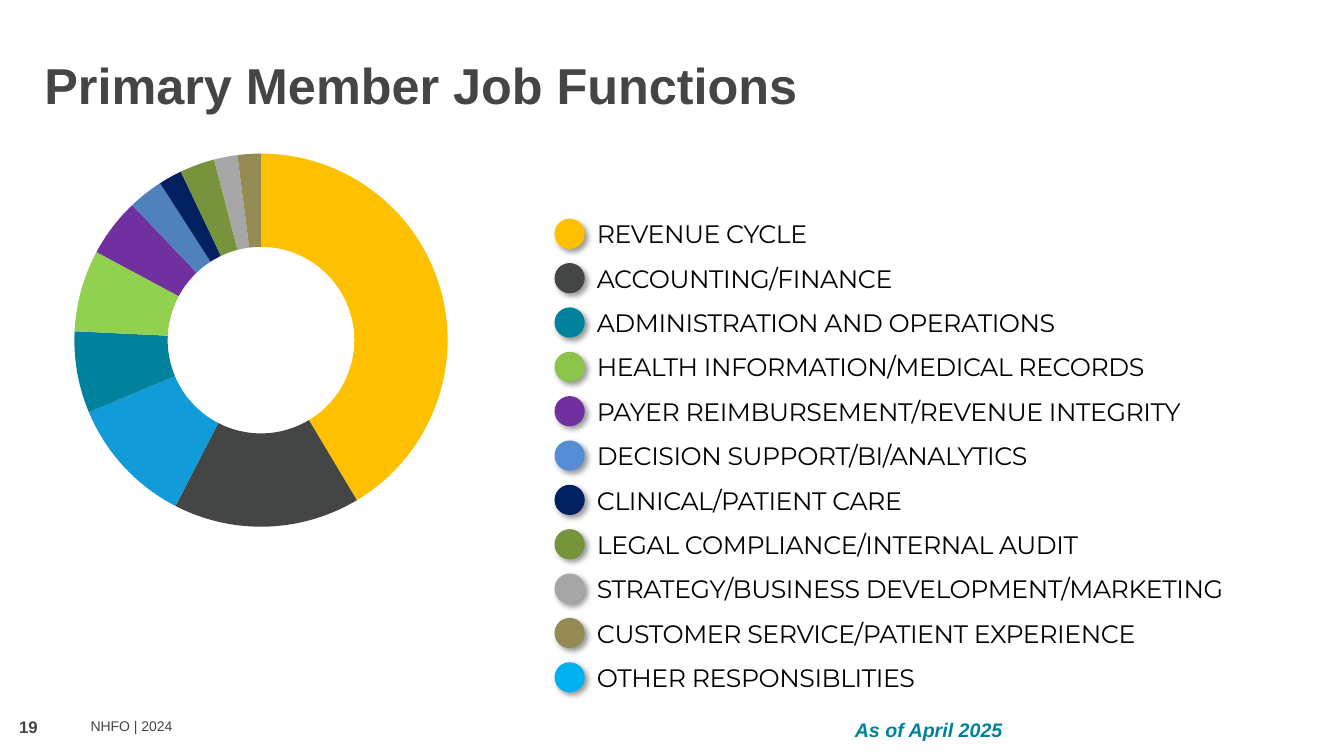
import pptx
import pptx.util
import pptx.chart.data
import pptx.dml.color
import pptx.enum.chart
import pptx.enum.shapes
import pptx.enum.text
import pptx.oxml
import pptx.oxml.ns
from dataclasses import dataclass

Inches = pptx.util.Inches
Pt = pptx.util.Pt
ANCHOR = pptx.enum.text.MSO_ANCHOR
NS = pptx.oxml.ns.nsdecls("a", "c")


@dataclass(frozen=True)
class Theme:
    dark: str = "444545"
    teal: str = "00829C"
    black: str = "000000"
    font: str = "Arial"
    legend_font: str = "Montserrat"
    chart_font: str = "Calibri"
    title: int = 36
    legend: int = 18
    note: int = 14
    number: int = 12
    small: int = 10


T = Theme()

# Share of members in percent, slice colour
SLICES = [
    (41, "FFC000"), (16, "444545"), (11, "119CD9"), (7, "00829C"),
    (7, "92D050"), (5, "7030A0"), (3, "4F81BD"), (2, "002060"),
    (3, "77933C"), (2, "A6A6A6"), (2, "948A54"),
]
JOB_FUNCTIONS = [
    ("REVENUE CYCLE", "FFC000"),
    ("ACCOUNTING/FINANCE", "444545"),
    ("ADMINISTRATION AND OPERATIONS", "00829C"),
    ("HEALTH INFORMATION/MEDICAL RECORDS", "8CC34B"),
    ("PAYER REIMBURSEMENT/REVENUE INTEGRITY", "7030A0"),
    ("DECISION SUPPORT/BI/ANALYTICS", "558ED5"),
    ("CLINICAL/PATIENT CARE", "002060"),
    ("LEGAL COMPLIANCE/INTERNAL AUDIT", "77933C"),
    ("STRATEGY/BUSINESS DEVELOPMENT/MARKETING", "A6A6A6"),
    ("CUSTOMER SERVICE/PATIENT EXPERIENCE", "948A54"),
    ("OTHER RESPONSIBLITIES", "00B0F0"),
]


def rgb(value):
    return pptx.dml.color.RGBColor.from_string(value)


def set_font(font, name, size, color, bold=False, italic=False):
    font.name, font.size = name, Pt(size)
    font.bold, font.italic = bold, italic
    font.color.rgb = rgb(color)


def add_text(s, box, text, name, size, color, bold=False, italic=False):
    tf = s.shapes.add_textbox(*map(Inches, box)).text_frame
    tf.word_wrap = True
    tf.text = text
    set_font(tf.paragraphs[0].runs[0].font, name, size, color, bold, italic)
    return tf


def add_title(s, box, text):
    sp = s.shapes.title
    sp.left, sp.top, sp.width, sp.height = map(Inches, box)
    tf = sp.text_frame
    tf.text = text
    tf.word_wrap = True
    tf.vertical_anchor = ANCHOR.TOP
    tf.margin_top = Inches(0.11)
    p = tf.paragraphs[0]
    p.alignment = pptx.enum.text.PP_ALIGN.LEFT
    set_font(p.runs[0].font, T.font, T.title, T.dark, bold=True)


def add_doughnut(s, box):
    data = pptx.chart.data.CategoryChartData()
    data.categories = [str(i + 1) for i in range(len(SLICES))]
    data.add_series("Series 1", [share for share, _ in SLICES])
    chart = s.shapes.add_chart(
        pptx.enum.chart.XL_CHART_TYPE.DOUGHNUT, *map(Inches, box), data).chart
    chart.has_legend = chart.has_title = False
    set_font(chart.font, T.chart_font, T.small, T.black)
    plot = chart.plots[0]
    plot.vary_by_categories = False
    for i, (_, color) in enumerate(SLICES):
        fmt = plot.series[0].points[i].format
        fmt.fill.solid()
        fmt.fill.fore_color.rgb = rgb(color)
        fmt.line.fill.background()

    # Hole size and ring position inside the chart box
    plot_area = chart.element.find(".//" + pptx.oxml.ns.qn("c:plotArea"))
    plot_area.find(".//" + pptx.oxml.ns.qn("c:holeSize")).set("val", "81")
    for old in plot_area.findall(pptx.oxml.ns.qn("c:layout")):
        plot_area.remove(old)
    plot_area.insert(0, pptx.oxml.parse_xml(
        f'<c:layout {NS}><c:manualLayout><c:layoutTarget val="inner"/>'
        '<c:xMode val="edge"/><c:yMode val="edge"/><c:x val="0.05"/>'
        '<c:y val="0.03"/><c:w val="0.89"/><c:h val="0.93"/>'
        '</c:manualLayout></c:layout>'))


def add_dot(s, box, color):
    sp = s.shapes.add_shape(
        pptx.enum.shapes.MSO_SHAPE.OVAL, *map(Inches, box))
    sp.fill.solid()
    sp.fill.fore_color.rgb = rgb(color)
    sp.line.fill.background()
    sp.element.spPr.append(pptx.oxml.parse_xml(
        f'<a:effectLst {NS}><a:outerShdw blurRad="50800" dist="38100" '
        f'dir="2700000" algn="tl" rotWithShape="0"><a:srgbClr val="{T.black}">'
        '<a:alpha val="40000"/></a:srgbClr></a:outerShdw></a:effectLst>'))


def add_legend(s, box):
    left, top, width, height = box
    row, dot, indent = height / len(JOB_FUNCTIONS), 0.3, 0.42
    for i, (label, color) in enumerate(JOB_FUNCTIONS):
        y = top + i * row
        add_dot(s, (left, y + (row - dot) / 2, dot, dot), color)
        tf = add_text(s, (left + indent, y, width - indent, row), label,
                      T.legend_font, T.legend, T.black)
        tf.margin_left = tf.margin_right = 0
        tf.margin_top = tf.margin_bottom = 0
        tf.vertical_anchor = ANCHOR.MIDDLE
        tf.paragraphs[0].runs[0].font._element.set("spc", "-30")


def add_footer(s, box):
    left, top, width, height = box
    add_text(s, (left, top, 0.45, height), "19",
             T.font, T.number, T.dark, bold=True)
    add_text(s, (left + 0.71, top + 0.01, 7, height), "NHFO | 2024",
             T.font, T.small, T.dark)
    tf = add_text(s, (left + width - 1.96, top + 0.04, 1.96, 0.4),
                  "As of April 2025", T.font, T.note, T.teal, True, True)
    tf.paragraphs[0].line_spacing = 0.9


def main():
    prs = pptx.Presentation()
    prs.slide_width, prs.slide_height = Inches(13.33), Inches(7.5)
    s = prs.slides.add_slide(prs.slide_layouts[5])
    add_title(s, (0.34, 0.43, 12.54, 0.91), "Primary Member Job Functions")
    add_doughnut(s, (0.53, 1.4, 4.16, 3.99))
    add_legend(s, (5.5, 2.1, 7.59, 4.84))
    add_footer(s, (0.09, 7.06, 10.25, 0.3))
    prs.save("out.pptx")


if __name__ == "__main__":
    main()
